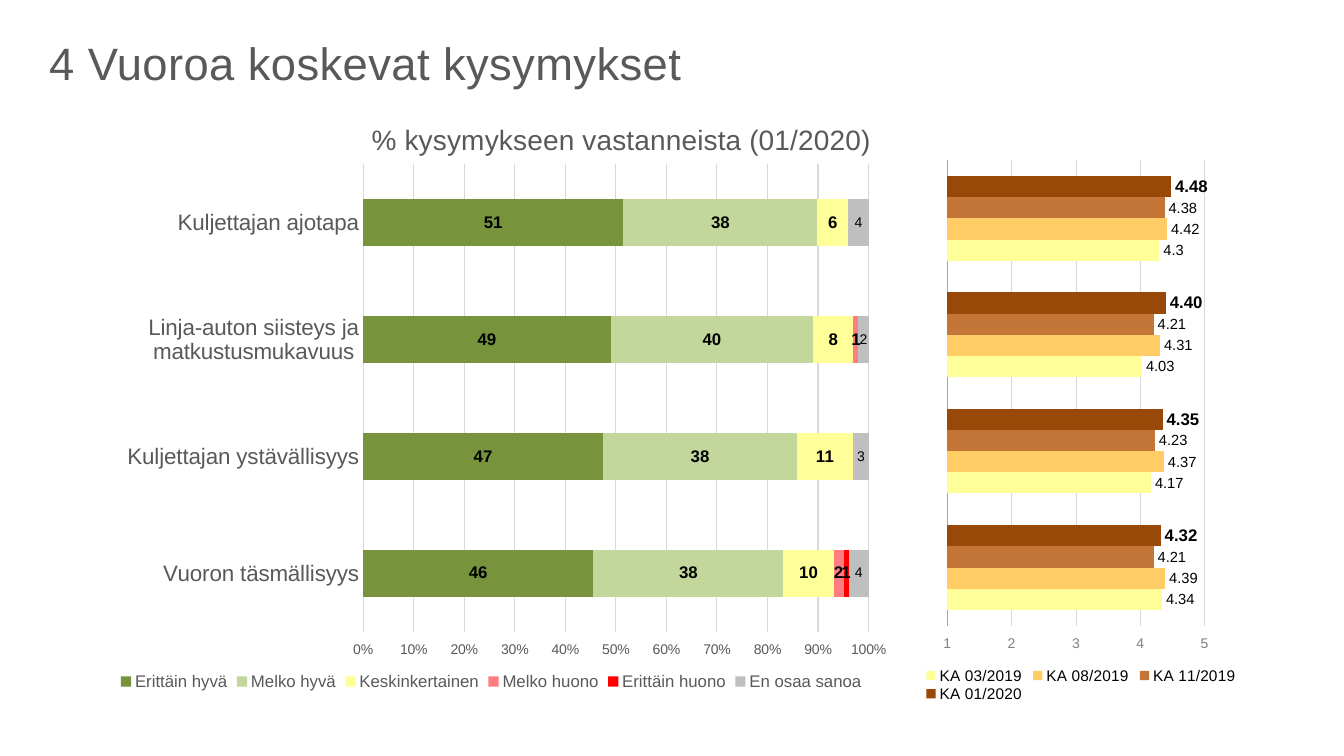
from dataclasses import dataclass
from lxml.etree import SubElement
from pptx import Presentation
from pptx.chart.chart import Chart
from pptx.chart.data import CategoryChartData
from pptx.dml.color import RGBColor
from pptx.enum.chart import (XL_CHART_TYPE, XL_LABEL_POSITION, XL_LEGEND_POSITION,
                             XL_TICK_LABEL_POSITION, XL_TICK_MARK)
from pptx.oxml import parse_xml
from pptx.oxml.ns import nsdecls, qn
from pptx.util import Inches, Pt

WIDE, HIGH = Inches(13.33), Inches(7.5)
CELL = Inches(0.1)  # side of one square of the slide's grid
FACE = "Arial"
BLACK = RGBColor(0x00, 0x00, 0x00)
DARK = RGBColor(0x59, 0x59, 0x59)
MID = RGBColor(0x80, 0x80, 0x80)
EDGE = RGBColor(0xA6, 0xA6, 0xA6)
PALE = RGBColor(0xD9, 0xD9, 0xD9)
GREEN = RGBColor(0x77, 0x93, 0x3C)
LIME = RGBColor(0xC3, 0xD6, 0x9B)
YELLOW = RGBColor(0xFF, 0xFF, 0x99)
PINK = RGBColor(0xFF, 0x7C, 0x80)
RED = RGBColor(0xFF, 0x00, 0x00)
GREY = RGBColor(0xBF, 0xBF, 0xBF)
BROWN = RGBColor(0x98, 0x48, 0x07)
RUST = RGBColor(0xC3, 0x76, 0x38)
AMBER = RGBColor(0xFF, 0xCC, 0x66)


@dataclass
class Series:
    name: str
    values: tuple
    color: RGBColor
    size: float
    bold: bool = False
    form: str = "General"


@dataclass
class Panel:
    """One bar chart; box is in grid columns and rows, plot and legend in % of the chart."""
    kind: XL_CHART_TYPE
    box: tuple
    plot: tuple
    legend: tuple
    key_size: float
    key_color: RGBColor
    line: RGBColor
    low: float
    high: float
    step: float
    form: str
    tick: XL_TICK_MARK
    tick_color: RGBColor
    grid: float
    place: XL_LABEL_POSITION
    series: list


TOPICS = ("Kuljettajan ajotapa", "Linja-auton siisteys ja matkustusmukavuus",
          "Kuljettajan ystävällisyys", "Vuoron täsmällisyys")
COUNT = "0;;"  # leaves zero shares without a label

SHARES = Panel(
    XL_CHART_TYPE.BAR_STACKED_100, (5.3, 11, 83.7, 59.6),
    (36.7, 8.9, 59.9, 77.8), (6.9, 92.5, 90, 5), 12, DARK, PALE,
    0, 1, 0.1, "0%", XL_TICK_MARK.OUTSIDE, DARK, 0.75, XL_LABEL_POSITION.CENTER,
    [Series("Erittäin hyvä", (51, 49, 47, 46), GREEN, 12, True, COUNT),
     Series("Melko hyvä", (38, 40, 38, 38), LIME, 12, True, COUNT),
     Series("Keskinkertainen", (6, 8, 11, 10), YELLOW, 12, True, COUNT),
     Series("Melko huono", (0, 1, 0, 2), PINK, 12, True, COUNT),
     Series("Erittäin huono", (0, 0, 0, 1), RED, 12, True, COUNT),
     Series("En osaa sanoa", (4, 2, 3, 4), GREY, 10, False, COUNT)])

MEANS = Panel(
    XL_CHART_TYPE.BAR_CLUSTERED, (90.3, 10.3, 35.4, 59.6),
    (10.3, 9.4, 72.1, 77.5), (2.8, 93.6, 90, 6.2), 11, BLACK, EDGE,
    1, 5, 1, "General", XL_TICK_MARK.NONE, MID, 0.25, XL_LABEL_POSITION.OUTSIDE_END,
    [Series("KA 01/2020", (4.48, 4.4, 4.35, 4.32), BROWN, 12, True, "#,##0.00"),
     Series("KA 11/2019", (4.38, 4.21, 4.23, 4.21), RUST, 10.5),
     Series("KA 08/2019", (4.42, 4.31, 4.37, 4.39), AMBER, 10.5),
     Series("KA 03/2019", (4.3, 4.03, 4.17, 4.34), YELLOW, 10.5)])


def style(font, size: float, color: RGBColor = BLACK, bold: bool = False) -> None:
    font.name, font.size, font.bold = FACE, Pt(size), bold
    font.color.rgb = color


def write(frame, text: str, *, gap: float = 0, lead: float = 1, **form) -> None:
    """Put one line of text in a frame; gap is the letter spacing in points."""
    para = frame.paragraphs[0]
    para.line_spacing = lead
    run = para.add_run()
    run.text = text
    style(run.font, **form)
    if gap:
        run.font._element.set("spc", str(round(gap * 100)))


def span(box: tuple) -> list:
    return [round(part * CELL) for part in box]


def fix(node, index: int, box: tuple, inner: bool = False) -> None:
    """Give a chart part a manual layout of x, y and perhaps width, height in %."""
    for old in node.findall(qn("c:layout")):
        node.remove(old)
    layout = parse_xml(f"<c:layout {nsdecls('c')}><c:manualLayout/></c:layout>")
    rules = [("layoutTarget", "inner")] if inner else []
    rules += [("xMode", "edge"), ("yMode", "edge")]
    rules += [(tag, f"{part / 100:.3f}") for tag, part in zip("xywh", box)]
    for tag, val in rules:
        SubElement(layout[0], qn(f"c:{tag}")).set("val", val)
    node.insert(index, layout)


def draw(slide, panel: Panel) -> Chart:
    data = CategoryChartData()
    data.categories = TOPICS
    for item in panel.series:
        data.add_series(item.name, item.values)
    chart = slide.shapes.add_chart(panel.kind, *span(panel.box), data).chart
    style(chart.font, 18)
    chart.has_title = False
    fix(chart._chartSpace.chart.plotArea, 0, panel.plot, inner=True)

    plot = chart.plots[0]
    plot.gap_width, plot.vary_by_categories = 150, False
    for item, bar in zip(panel.series, plot.series):
        bar.invert_if_negative = False
        bar.format.fill.solid()
        bar.format.fill.fore_color.rgb = item.color
        tags = bar.data_labels
        tags.show_value, tags.position = True, panel.place
        tags.number_format, tags.number_format_is_linked = item.form, False
        style(tags.font, item.size, bold=item.bold)

    cats = chart.category_axis
    cats.reverse_order, cats.major_tick_mark = True, XL_TICK_MARK.NONE
    cats.format.line.color.rgb, cats.format.line.width = panel.line, Pt(0.75)
    style(cats.tick_labels.font, 16, DARK)

    axis = chart.value_axis
    axis.minimum_scale, axis.maximum_scale = panel.low, panel.high
    axis.major_unit, axis.major_tick_mark = panel.step, panel.tick
    axis.tick_label_position = XL_TICK_LABEL_POSITION.HIGH
    axis.format.line.fill.background()
    grid = axis.major_gridlines.format.line
    grid.color.rgb, grid.width = PALE, Pt(panel.grid)
    ticks = axis.tick_labels
    ticks.number_format, ticks.number_format_is_linked = panel.form, False
    style(ticks.font, 10, panel.tick_color)

    chart.has_legend = True
    key = chart.legend
    key.position, key.include_in_layout = XL_LEGEND_POSITION.BOTTOM, False
    style(key.font, panel.key_size, panel.key_color)
    fix(key._element, 1, panel.legend)
    return chart


def main() -> None:
    deck = Presentation()
    deck.slide_width, deck.slide_height = WIDE, HIGH
    slide = deck.slides.add_slide(deck.slide_layouts[6])

    head = slide.shapes.add_textbox(*span((3.9, 2.6, 107.3, 5.4))).text_frame
    head.word_wrap, head.margin_top = True, Inches(0.04)
    write(head, "4 Vuoroa koskevat kysymykset", size=32.4, color=DARK, gap=0.3, lead=1.1)

    chart = draw(slide, SHARES)
    chart.plots[0].overlap = 100
    title = chart.chart_title
    write(title.text_frame, "% kysymykseen vastanneista (01/2020)", size=20, color=DARK)
    title.include_in_layout = False
    fix(title._element, 1, (37.1, 1))

    chart = draw(slide, MEANS)
    chart.category_axis.tick_label_position = XL_TICK_LABEL_POSITION.NONE

    deck.save("out.pptx")


if __name__ == "__main__":
    main()
